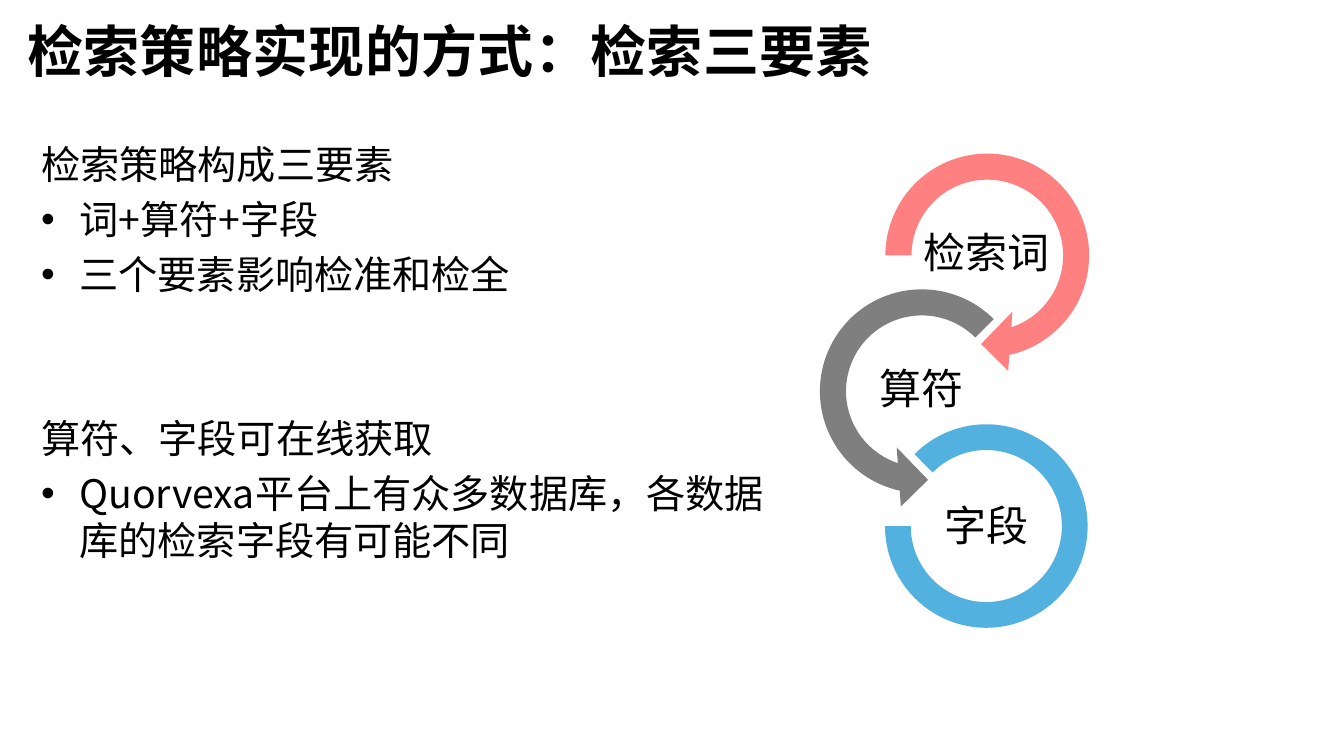
from lxml.etree import SubElement
from pptx import Presentation
from pptx.dml.color import RGBColor
from pptx.enum.shapes import MSO_SHAPE
from pptx.enum.text import MSO_ANCHOR, MSO_AUTO_SIZE, PP_ALIGN
from pptx.oxml.ns import qn
from pptx.util import Inches, Pt

COLORS = {"text": "000000", "term": "FF8080", "operator": "7F7F7F", "field": "52B1DF"}
CJK = "Noto Sans CJK SC"
WIDTH, HEIGHT = Inches(13.33), Inches(7.5)
COLS, ROWS = 40, 24
STEP_COLS, STEP_ROWS = 1.95, 4.33  # zigzag of the three rings
LABEL = (27.42, 7.05, 3.9, 2.08)
BODY_SIZE = 28
GAP = 5.6

# shape, colour, label, grid box of the shape in the first position, adjustments
RINGS = [
    (MSO_SHAPE.CIRCULAR_ARROW, "term", "检索词", (25.86, 4.35, 7.05, 7.52),
     (0.11, 11.42, 45, 108, 0.125)),
    (MSO_SHAPE.LEFT_CIRCULAR_ARROW, "operator", "算符", (25.86, 4.33, 7.05, 7.52),
     (0.11, 11.42, 63, 189, 0.125)),
    (MSO_SHAPE.BLOCK_ARC, "field", "字段", (26.34, 4.81, 6.03, 6.46),
     (135, 108, 0.127)),
]

# text, bulleted, space before in points
BODY = [
    ("检索策略构成三要素", False, 0),
    ("词+算符+字段", True, GAP),
    ("三个要素影响检准和检全", True, GAP),
    ("算符、字段可在线获取", False, 84),
    ("Quorvexa平台上有众多数据库，各数据库的检索字段有可能不同", True, GAP),
]


def grid(col, row, cols, rows):
    """Turn a box in grid units into left, top, width and height."""
    return (int(WIDTH * col / COLS), int(HEIGHT * row / ROWS),
            int(WIDTH * cols / COLS), int(HEIGHT * rows / ROWS))


def shifted(box, i):
    """Move a grid box to the i-th place of the zigzag."""
    col, row, cols, rows = box
    return grid(col - STEP_COLS * (i % 2), row + STEP_ROWS * i, cols, rows)


def write(p, text, size, font=CJK, bold=False, align=PP_ALIGN.LEFT,
          before=0, after=0, line=None, spacing=None):
    p.alignment = align
    p.space_before, p.space_after = Pt(before), Pt(after)
    p.line_spacing = line
    r = p.add_run()
    r.text = text
    r.font.name, r.font.size, r.font.bold = font, Pt(size), bold
    r.font.color.rgb = RGBColor.from_string(COLORS["text"])
    rPr = r._r.get_or_add_rPr()
    SubElement(rPr, qn("a:ea")).set("typeface", CJK)
    if spacing:
        rPr.set("spc", str(spacing))


def add_bullet(p):
    pPr = p._p.get_or_add_pPr()
    indent = Inches(0.38)
    pPr.set("marL", str(indent))
    pPr.set("indent", str(-indent))
    SubElement(pPr, qn("a:buFont")).set("typeface", "Arial")
    SubElement(pPr, qn("a:buChar")).set("char", "•")


def add_title(slide, text):
    sp = slide.shapes.title
    sp.left, sp.top, sp.width, sp.height = grid(0.51, -0.06, 30, 4.35)
    tf = sp.text_frame
    tf.auto_size, tf.vertical_anchor = MSO_AUTO_SIZE.NONE, MSO_ANCHOR.TOP
    write(tf.paragraphs[0], text, 40, bold=True, line=1.2, after=6, spacing=30)


def add_body(slide):
    tf = slide.shapes.add_textbox(*grid(0.93, 4.29, 22.65, 19.7)).text_frame
    tf.word_wrap = True
    for i, (text, bulleted, before) in enumerate(BODY):
        p = tf.add_paragraph() if i else tf.paragraphs[0]
        if bulleted:
            add_bullet(p)
        write(p, text, BODY_SIZE, before=before)


def add_ring(slide, i, kind, color, label, box, adjustments):
    sp = slide.shapes.add_shape(kind, *shifted(box, i))
    sp.shadow.inherit = False
    sp.fill.solid()
    sp.fill.fore_color.rgb = RGBColor.from_string(COLORS[color])
    sp.line.fill.background()
    for n, value in enumerate(adjustments):
        sp.adjustments[n] = value

    tf = slide.shapes.add_textbox(*shifted(LABEL, i)).text_frame
    tf.word_wrap, tf.vertical_anchor = True, MSO_ANCHOR.MIDDLE
    tf.margin_left = tf.margin_right = tf.margin_top = tf.margin_bottom = Inches(0.02)
    write(tf.paragraphs[0], label, 30, font="Calibri", align=PP_ALIGN.CENTER, line=0.9)


def main():
    prs = Presentation()
    prs.slide_width, prs.slide_height = WIDTH, HEIGHT
    slide = prs.slides.add_slide(prs.slide_layouts.get_by_name("Title Only"))
    add_title(slide, "检索策略实现的方式：检索三要素")
    for i, ring in enumerate(RINGS):
        add_ring(slide, i, *ring)
    add_body(slide)
    prs.save("out.pptx")


if __name__ == "__main__":
    main()
